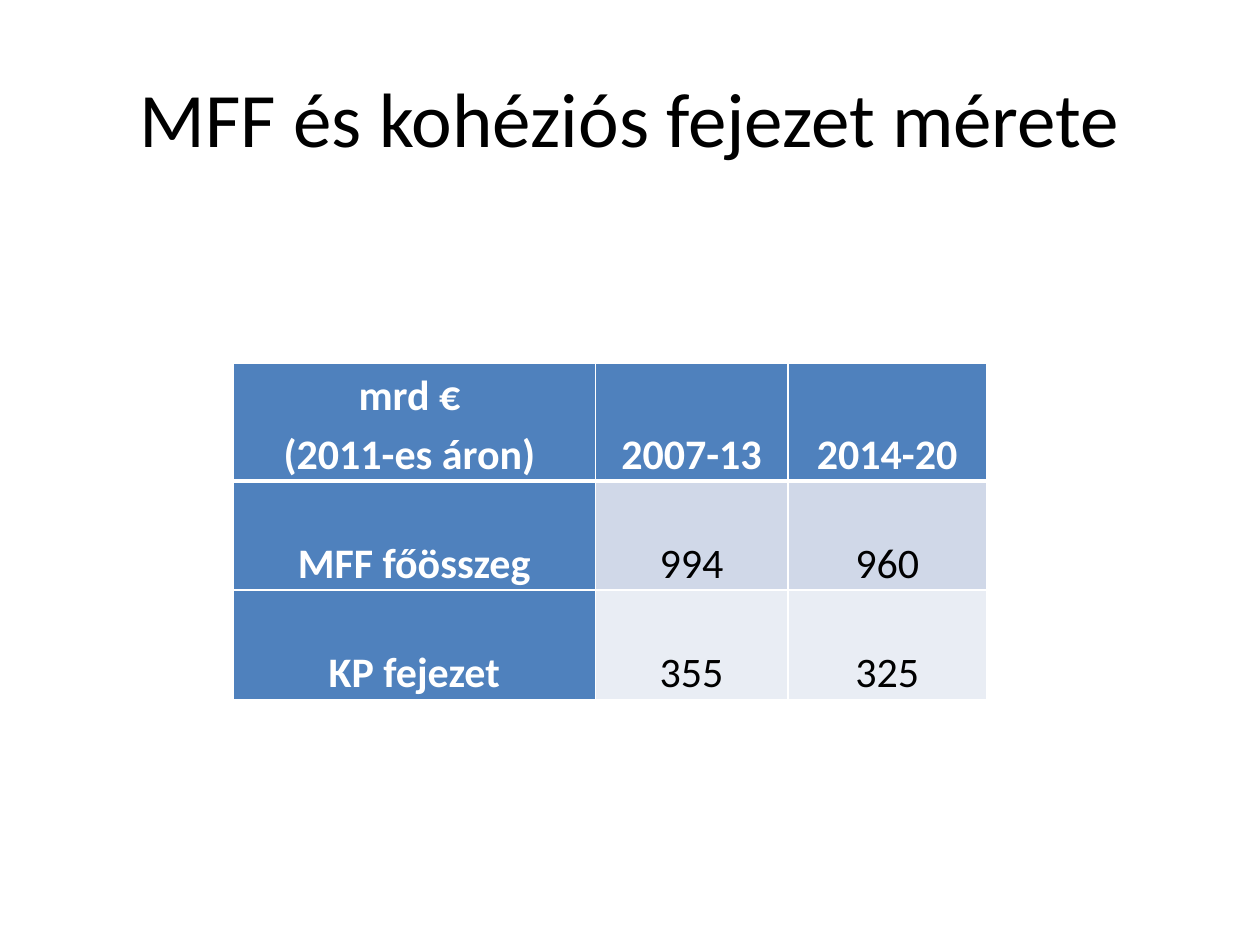
from lxml import etree
from pptx import Presentation
from pptx import util as u
from pptx.dml.color import RGBColor
from pptx.enum import text
from pptx.oxml import ns

HUES = {"ink": "000000", "white": "FFFFFF", "blue": "4F81BD",
        "band": "D0D8E8", "pale": "E9EDF4"}


def rgb(name):
    return RGBColor.from_string(HUES[name])


def apply(item, vals):
    for key, val in vals.items():
        setattr(item, key, val)


class Deck:
    font = "Calibri"

    def __init__(self, wide, high):
        self.prs = Presentation()
        apply(self.prs, {"slide_width": u.Pt(wide), "slide_height": u.Pt(high)})
        self.slide = self.prs.slides.add_slide(self.prs.slide_layouts[6])

    def label(self, frame, words, size, hue, bold=False, space=1.0):
        frame.text = words
        for para in frame.paragraphs:
            apply(para, {"alignment": text.PP_ALIGN.CENTER, "line_spacing": space})
            for run in para.runs:
                apply(run.font, {"name": self.font, "size": u.Pt(size), "bold": bold})
                run.font.color.rgb = rgb(hue)

    def title(self, words, box, size):
        frame = self.slide.shapes.add_textbox(*map(u.Pt, box)).text_frame
        apply(frame, {"word_wrap": True, "vertical_anchor": text.MSO_ANCHOR.MIDDLE})
        self.label(frame, words, size, "ink")

    def border(self, cell, sides):
        # Lines must come before the fill in the cell properties
        props = cell._tc.get_or_add_tcPr()
        for spot, (side, wide) in enumerate(sides.items()):
            line = etree.Element(ns.qn(f"a:ln{side}"), w=str(u.Pt(wide)))
            fill = etree.SubElement(line, ns.qn("a:solidFill"))
            etree.SubElement(fill, ns.qn("a:srgbClr"), val=HUES["white"])
            props.insert(spot, line)

    def table(self, rows, left, top, wides, highs, size):
        grid = self.slide.shapes.add_table(
            len(rows), len(wides), u.Pt(left), u.Pt(top),
            u.Pt(sum(wides)), u.Pt(sum(highs))).table
        for col, wide in zip(grid.columns, wides):
            col.width = u.Pt(wide)
        for r, (words, high) in enumerate(zip(rows, highs)):
            grid.rows[r].height = u.Pt(high)
            for c, word in enumerate(words):
                cell = grid.cell(r, c)
                head = r == 0 or c == 0
                apply(cell, {"margin_left": u.Pt(3.6), "margin_right": u.Pt(3.6),
                             "margin_top": 0, "margin_bottom": 0,
                             "vertical_anchor": text.MSO_ANCHOR.BOTTOM})
                cell.fill.solid()
                cell.fill.fore_color.rgb = rgb(
                    "blue" if head else "band" if r % 2 else "pale")
                self.label(cell.text_frame, word, size,
                           "white" if head else "ink", head, 1.15)
                # Thick rule under the header row
                self.border(cell, {"L": 1, "R": 1, "T": 3 if r == 1 else 1,
                                   "B": 3 if r == 0 else 1})


def main():
    deck = Deck(720, 540)

    # Heading
    deck.title("MFF és kohéziós fejezet mérete", (36, 21.6, 648, 90), 44)

    # Budget table
    rows = [("mrd € \n(2011-es áron) ", "2007-13", "2014-20"),
            ("MFF főösszeg", "994", "960"),
            ("KP fejezet", "355", "325")]
    deck.table(rows, 133.2, 207.4, (207, 110, 113.6), (67.4, 62.4, 62.4), 24)

    deck.prs.save("out.pptx")


if __name__ == "__main__":
    main()
